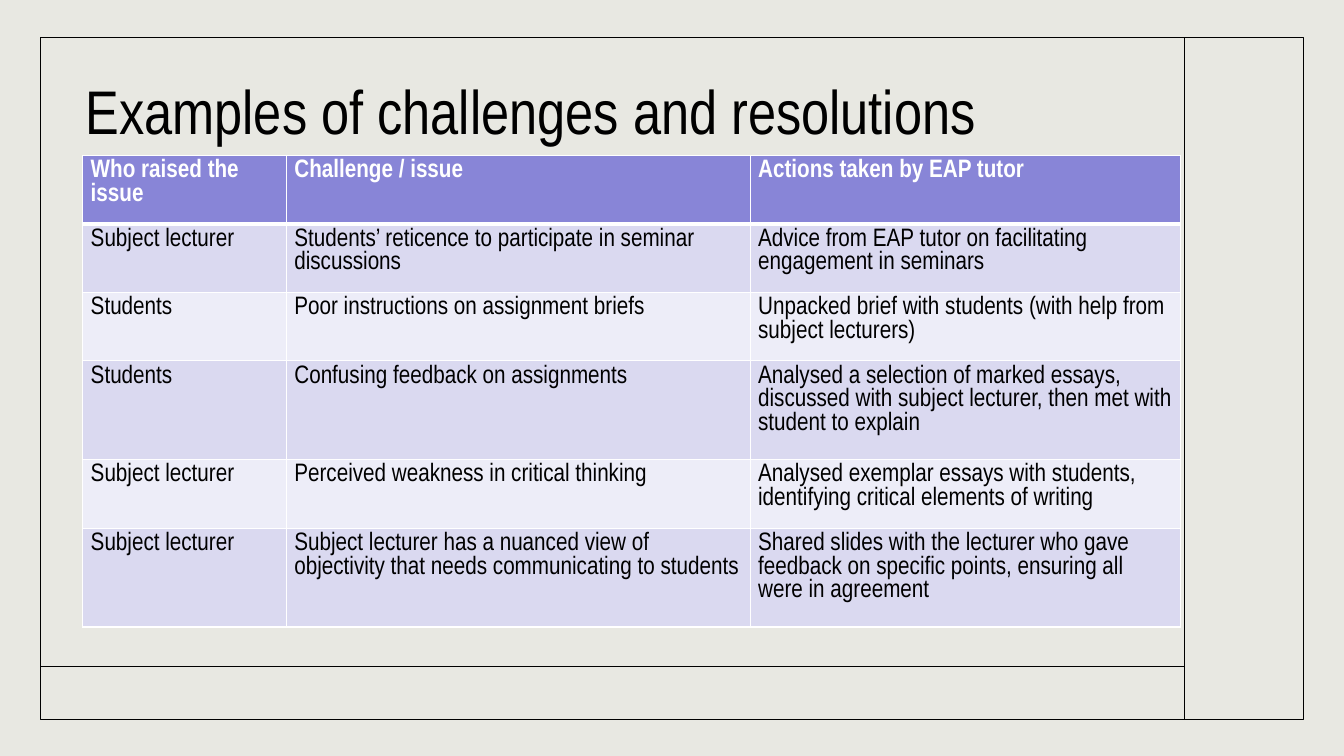
from lxml import etree
from pptx import Presentation
from pptx.dml.color import RGBColor
from pptx.enum.shapes import MSO_CONNECTOR, MSO_SHAPE
from pptx.enum.text import MSO_ANCHOR
from pptx.oxml.ns import qn
from pptx.util import Inches, Pt

LINE = MSO_CONNECTOR.STRAIGHT
RECT = MSO_SHAPE.RECTANGLE
MIDDLE = MSO_ANCHOR.MIDDLE

PAPER = RGBColor(0xE8, 0xE8, 0xE2)
BLACK = RGBColor(0, 0, 0)
WHITE = RGBColor(0xFF, 0xFF, 0xFF)
HEAD = RGBColor(0x88, 0x85, 0xD7)
DARK = RGBColor(0xDA, 0xD9, 0xF0)
LIGHT = RGBColor(0xED, 0xED, 0xF8)
FONT = "Arial Narrow"

WIDTHS = [2.02, 4.6, 4.27]
HEIGHTS = [0.41, 0.68, 0.68, 0.96, 0.68, 0.96]
ROWS = [
    ("Who raised the issue", "Challenge / issue", "Actions taken by EAP tutor"),
    ("Subject lecturer",
     "Students’ reticence to participate in seminar discussions",
     "Advice from EAP tutor on facilitating engagement in seminars"),
    ("Students",
     "Poor instructions on assignment briefs",
     "Unpacked brief with students (with help from subject lecturers)"),
    ("Students",
     "Confusing feedback on assignments",
     "Analysed a selection of marked essays, discussed with subject lecturer, "
     "then met with student to explain"),
    ("Subject lecturer",
     "Perceived weakness in critical thinking",
     "Analysed exemplar essays with students, identifying critical elements of writing"),
    ("Subject lecturer",
     "Subject lecturer has a nuanced view of objectivity that needs "
     "communicating to students",
     "Shared slides with the lecturer who gave feedback on specific points, "
     "ensuring all were in agreement"),
]


def add_text(para, text, size, color, bold=False):
    run = para.add_run()
    run.text = text
    run.font.name = FONT
    run.font.size = Pt(size)
    run.font.bold = bold
    run.font.color.rgb = color


def set_edges(cell, top, bottom):
    """Draw white cell borders; top and bottom are widths in points."""
    props = cell._tc.get_or_add_tcPr()
    edges = [("a:lnL", 1), ("a:lnR", 1), ("a:lnT", top), ("a:lnB", bottom)]
    for spot, (tag, width) in enumerate(edges):
        edge = etree.Element(qn(tag), w=str(Pt(width)))
        fill = etree.SubElement(edge, qn("a:solidFill"))
        etree.SubElement(fill, qn("a:srgbClr"), val=str(WHITE))
        props.insert(spot, edge)


deck = Presentation()
deck.slide_width = Inches(13.33)
deck.slide_height = Inches(7.5)
slide = deck.slides.add_slide(deck.slide_layouts[6])
slide.background.fill.solid()
slide.background.fill.fore_color.rgb = PAPER

# Frame and its dividing lines
frame = slide.shapes.add_shape(
    RECT, Inches(0.4), Inches(0.37), Inches(12.53), Inches(6.77))
frame.shadow.inherit = False
frame.fill.background()
frame.line.color.rgb = BLACK
frame.line.width = Pt(1)

for ends in [(0.41, 6.61, 11.75, 6.61), (11.75, 0.37, 11.75, 7.13)]:
    rule = slide.shapes.add_connector(LINE, *map(Inches, ends))
    rule.line.color.rgb = BLACK
    rule.line.width = Pt(1)
    etree.SubElement(rule._element.spPr, qn("a:effectLst"))

# Title
title = slide.shapes.add_textbox(
    Inches(0.75), Inches(0.55), Inches(10.71), Inches(1.17)).text_frame
title.word_wrap = True
title.vertical_anchor = MIDDLE
title.paragraphs[0].line_spacing = 0.9
add_text(title.paragraphs[0], "Examples of challenges and resolutions", 44, BLACK)

# Table
table = slide.shapes.add_table(
    len(ROWS), len(WIDTHS), Inches(0.82), Inches(1.54),
    Inches(sum(WIDTHS)), Inches(sum(HEIGHTS))).table
for col, width in zip(table.columns, WIDTHS):
    col.width = Inches(width)

for r, (texts, height) in enumerate(zip(ROWS, HEIGHTS)):
    table.rows[r].height = Inches(height)
    first = r == 0
    for c, text in enumerate(texts):
        cell = table.cell(r, c)
        cell.margin_left = cell.margin_right = Inches(0.08)
        cell.margin_top = cell.margin_bottom = Inches(0.04)
        cell.fill.solid()
        cell.fill.fore_color.rgb = HEAD if first else DARK if r % 2 else LIGHT
        set_edges(cell, 3 if r == 1 else 1, 3 if first else 1)
        add_text(cell.text_frame.paragraphs[0], text, 18,
                 WHITE if first else BLACK, first)

deck.save("out.pptx")
